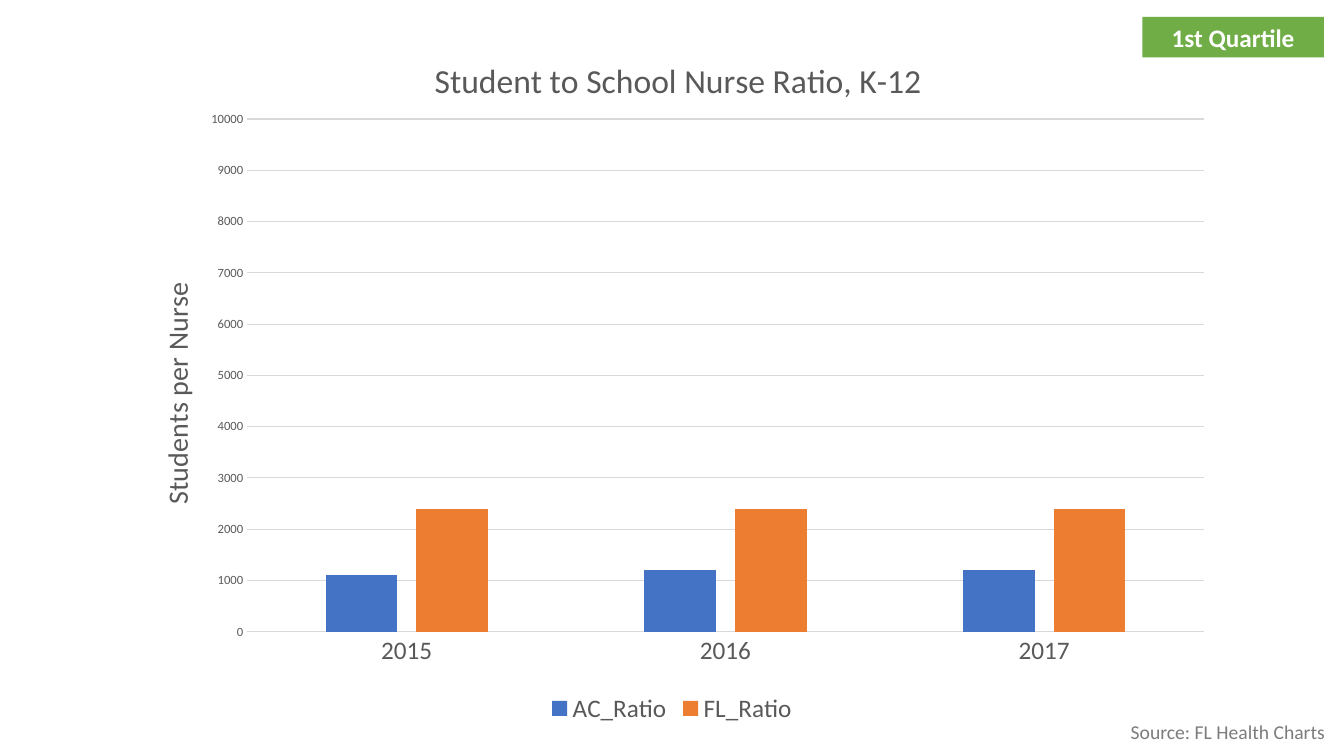
from dataclasses import dataclass

from lxml import etree
from pptx import Presentation
from pptx.chart.data import CategoryChartData
from pptx.dml.color import RGBColor
from pptx.enum.chart import XL_CHART_TYPE, XL_LEGEND_POSITION, XL_TICK_MARK
from pptx.enum.shapes import MSO_SHAPE
from pptx.enum.text import MSO_ANCHOR, PP_ALIGN
from pptx.oxml.ns import qn
from pptx.util import Pt

COLUMNS = XL_CHART_TYPE.COLUMN_CLUSTERED
BOTTOM = XL_LEGEND_POSITION.BOTTOM
NO_TICK = XL_TICK_MARK.NONE
RECTANGLE = MSO_SHAPE.RECTANGLE
MIDDLE = MSO_ANCHOR.MIDDLE
CENTER = PP_ALIGN.CENTER
LEFT = PP_ALIGN.LEFT

FONT = "Calibri"
BLANK_LAYOUT = 6
COLORS = {
    "badge": "70AD47",
    "white": "FFFFFF",
    "source": "7C7C7C",
    "label": "595959",
    "grid": "D9D9D9",
    "county": "4472C4",
    "state": "ED7D31",
}


@dataclass
class Ratio:
    """One series of students per nurse."""
    name: str
    values: tuple
    color: str


YEARS = ("2015", "2016", "2017")
RATIOS = (
    Ratio("AC_Ratio", (1100, 1200, 1200), "county"),
    Ratio("FL_Ratio", (2400, 2400, 2400), "state"),
)


def rgb(name: str) -> RGBColor:
    """Return the named colour."""
    return RGBColor.from_string(COLORS[name])


def style_font(font, size: float, color: str, bold: bool = False) -> None:
    """Set the typeface, size, colour and weight."""
    font.name = FONT
    font.size = Pt(size)
    font.bold = bold
    font.color.rgb = rgb(color)


def write(frame, text: str, size: float, color: str, bold: bool = False,
          align=None) -> None:
    """Write one formatted run into a text frame."""
    paragraph = frame.paragraphs[0]
    paragraph.alignment = align
    run = paragraph.add_run()
    run.text = text
    style_font(run.font, size, color, bold)


def place(element, index: int, **fractions) -> None:
    """Give a chart part a manual layout in fractions of the chart."""
    for previous in element.findall(qn("c:layout")):
        element.remove(previous)
    layout = etree.Element(qn("c:layout"))
    manual = etree.SubElement(layout, qn("c:manualLayout"))
    if "w" in fractions:
        etree.SubElement(manual, qn("c:layoutTarget"), val="inner")
    for mode in ("xMode", "yMode"):
        etree.SubElement(manual, qn(f"c:{mode}"), val="edge")
    for side, fraction in fractions.items():
        etree.SubElement(manual, qn(f"c:{side}"), val=str(fraction))
    element.insert(index, layout)


def style_axis(axis, size: float) -> None:
    """Format the labels and tick marks of an axis."""
    axis.major_tick_mark = NO_TICK
    axis.minor_tick_mark = NO_TICK
    style_font(axis.tick_labels.font, size, "label")


def style_line(line) -> None:
    """Draw a thin grey line."""
    line.color.rgb = rgb("grid")
    line.width = Pt(0.75)


def add_ratio_chart(slide) -> None:
    """Add the column chart of nurse ratios."""
    data = CategoryChartData()
    data.categories = YEARS
    for ratio in RATIOS:
        data.add_series(ratio.name, ratio.values)
    chart = slide.shapes.add_chart(
        COLUMNS, Pt(85), Pt(19.4), Pt(789.8), Pt(501.1), data).chart
    chart.font.name = FONT
    chart.font.size = Pt(10)

    chart.has_title = True
    write(chart.chart_title.text_frame, "Student to School Nurse Ratio, K-12",
          24, "label")
    place(chart.chart_title.element, 1, x=0.28, y=0.035)

    years = chart.category_axis
    style_axis(years, 18)
    style_line(years.format.line)

    students = chart.value_axis
    style_axis(students, 9)
    students.minimum_scale = 0
    students.maximum_scale = 10000
    students.major_unit = 1000
    students.format.line.fill.background()
    style_line(students.major_gridlines.format.line)
    students.has_title = True
    write(students.axis_title.text_frame, "Students per Nurse", 20, "label")
    place(students.axis_title.element, 1, x=0.03, y=0.357)

    chart.has_legend = True
    chart.legend.position = BOTTOM
    chart.legend.include_in_layout = False
    style_font(chart.legend.font, 18, "label")

    plot = chart.plots[0]
    plot.gap_width = 219
    plot.overlap = -27
    plot.vary_by_categories = False
    for series, ratio in zip(plot.series, RATIOS):
        series.format.fill.solid()
        series.format.fill.fore_color.rgb = rgb(ratio.color)
    plot_area = chart.element.find(".//" + qn("c:plotArea"))
    place(plot_area, 0, x=0.116, y=0.131, w=0.865, h=0.731)


def add_badge(slide) -> None:
    """Add the quartile badge."""
    badge = slide.shapes.add_shape(
        RECTANGLE, Pt(816), Pt(12), Pt(129.6), Pt(29))
    badge.shadow.inherit = False
    badge.fill.solid()
    badge.fill.fore_color.rgb = rgb("badge")
    badge.line.fill.background()
    badge.text_frame.vertical_anchor = MIDDLE
    write(badge.text_frame, "1st Quartile", 18, "white", True, CENTER)


def add_source(slide) -> None:
    """Add the data source line."""
    source = slide.shapes.add_textbox(Pt(800.6), Pt(510.5), Pt(159.4), Pt(29))
    source.text_frame.word_wrap = True
    write(source.text_frame, "Source: FL Health Charts", 14, "source",
          align=LEFT)


def main() -> None:
    """Build and save the slide."""
    deck = Presentation()
    deck.slide_width = Pt(960)
    deck.slide_height = Pt(540)
    slide = deck.slides.add_slide(deck.slide_layouts[BLANK_LAYOUT])
    add_ratio_chart(slide)
    add_badge(slide)
    add_source(slide)
    deck.save("out.pptx")


if __name__ == "__main__":
    main()
